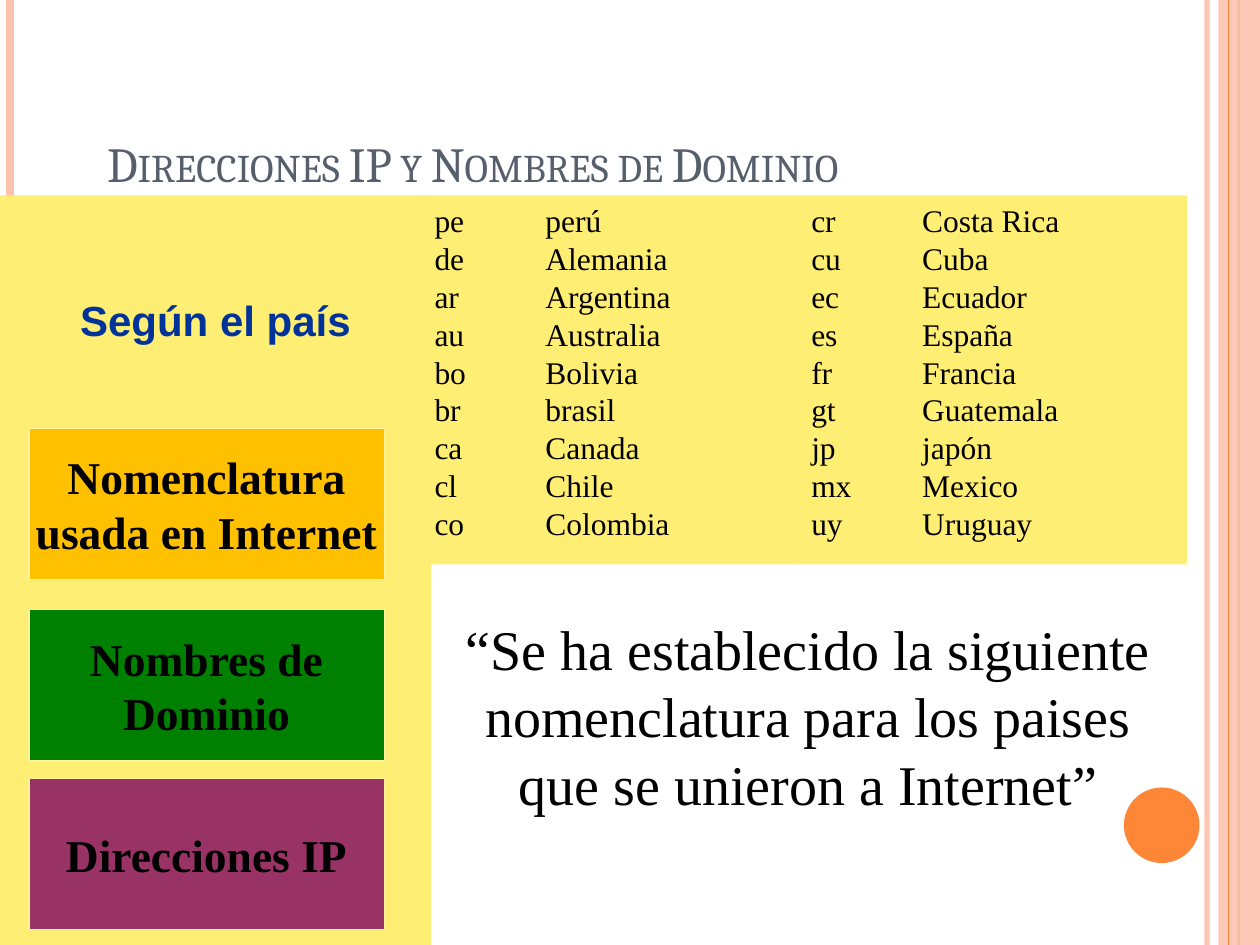
from dataclasses import dataclass

from lxml.etree import SubElement
from pptx import Presentation
from pptx.dml.color import RGBColor
from pptx.enum.shapes import MSO_CONNECTOR, MSO_SHAPE
from pptx.enum.text import MSO_ANCHOR, MSO_AUTO_SIZE, PP_ALIGN
from pptx.oxml.ns import qn
from pptx.util import Inches, Pt


@dataclass(frozen=True)
class Theme:
    heading_font: str = "Cambria"
    body_font: str = "Times New Roman"
    label_font: str = "Arial"
    heading: str = "575F6D"
    text: str = "000000"
    label: str = "003399"
    panel: str = "FFEE74"
    box_line: str = "FFF39D"
    amber: str = "FFC000"
    green: str = "008000"
    plum: str = "993366"
    pale: str = "FEC3AE"
    orange: str = "FE8637"
    heading_size: int = 28
    quote_size: int = 32
    box_size: int = 26
    label_size: int = 24
    list_size: int = 18
    line_height: float = 1.2


THEME = Theme()
WIDTH, HEIGHT = 10, 7.5

COUNTRIES_LEFT = [
    ("pe", "perú"), ("de", "Alemania"), ("ar", "Argentina"),
    ("au", "Australia"), ("bo", "Bolivia"), ("br", "brasil"),
    ("ca", "Canada"), ("cl", "Chile"), ("co", "Colombia"),
]
COUNTRIES_RIGHT = [
    ("cr", "Costa Rica"), ("cu", "Cuba"), ("ec", "Ecuador"),
    ("es", "España"), ("fr", "Francia"), ("gt", "Guatemala"),
    ("jp", "japón"), ("mx", "Mexico"), ("uy", "Uruguay"),
]


def set_alpha(fill, percent):
    color = fill._xPr.find(qn("a:solidFill"))[0]
    SubElement(color, qn("a:alpha"), val=str(percent * 1000))


def write_text(shape, text, size, color=THEME.text, font=THEME.body_font,
               bold=False, align=PP_ALIGN.CENTER, anchor=MSO_ANCHOR.TOP,
               wrap=True, hanging=0, small_caps=False):
    """Write one paragraph for each line of text, all in the same format."""
    frame = shape.text_frame
    frame.auto_size = MSO_AUTO_SIZE.NONE
    frame.word_wrap = wrap
    frame.vertical_anchor = anchor
    for index, line in enumerate(text.split("\n")):
        paragraph = frame.add_paragraph() if index else frame.paragraphs[0]
        paragraph.alignment = align
        paragraph.line_spacing = Pt(size * THEME.line_height)
        if hanging:
            properties = paragraph._p.get_or_add_pPr()
            properties.set("marL", str(Inches(hanging)))
            properties.set("indent", str(-Inches(hanging)))
        run = paragraph.add_run()
        run.text = line
        run.font.size = Pt(size)
        run.font.name = font
        run.font.bold = bold
        run.font.color.rgb = RGBColor.from_string(color)
        if small_caps:
            run.font._element.set("cap", "small")


def add_block(slide, box, fill, line=None, kind=MSO_SHAPE.RECTANGLE, alpha=None):
    shape = slide.shapes.add_shape(kind, *map(Inches, box))
    shape.shadow.inherit = False
    shape.fill.solid()
    shape.fill.fore_color.rgb = RGBColor.from_string(fill)
    if alpha:
        set_alpha(shape.fill, alpha)
    if line:
        shape.line.color.rgb = RGBColor.from_string(line)
        shape.line.width = Pt(0.75)
    else:
        shape.line.fill.background()
    return shape


def add_stripe(slide, x, color, width, alpha=None):
    """Draw a vertical line over the full height of the slide."""
    stripe = slide.shapes.add_connector(
        MSO_CONNECTOR.STRAIGHT, Inches(x), 0, Inches(x), Inches(HEIGHT))
    stripe.line.color.rgb = RGBColor.from_string(color)
    stripe.line.width = Pt(width)
    if alpha:
        set_alpha(stripe.line.fill, alpha)
    SubElement(stripe._element.spPr, qn("a:effectLst"))


def add_decoration(slide):
    add_stripe(slide, 9.58, THEME.pale, 3, alpha=93)
    add_stripe(slide, 0.08, THEME.pale, 4.5)
    add_stripe(slide, 9.83, THEME.orange, 1.5)
    add_block(slide, (9.67, 0, 0.33, HEIGHT), THEME.pale, alpha=87)
    add_stripe(slide, 9.75, THEME.orange, 0.75)
    add_block(slide, (8.92, 6.25, 0.6, 0.6), THEME.orange, kind=MSO_SHAPE.OVAL)


def add_title(slide, box, text):
    title = slide.shapes.title
    title.left, title.top, title.width, title.height = map(Inches, box)
    write_text(title, text, THEME.heading_size, THEME.heading, THEME.heading_font,
               align=PP_ALIGN.LEFT, anchor=MSO_ANCHOR.BOTTOM, small_caps=True)


def add_side_panel(slide, box):
    left, top, width, height = box
    panel = add_block(slide, box, THEME.panel)
    panel.text_frame.margin_top = Inches(0.79)
    write_text(panel, "Según el país", THEME.label_size, THEME.label,
               THEME.label_font, bold=True, wrap=False)
    topics = [
        (1.85, THEME.amber, "Nomenclatura\nusada en Internet"),
        (3.29, THEME.green, "Nombres de\nDominio"),
        (4.63, THEME.plum, "Direcciones IP"),
    ]
    for offset, fill, text in topics:
        topic = add_block(slide, (left + 0.23, top + offset, width - 0.6, 1.2),
                          fill, THEME.box_line)
        write_text(topic, text, THEME.box_size, bold=True,
                   anchor=MSO_ANCHOR.MIDDLE, wrap=False)


def add_country_list(slide, box, countries):
    block = add_block(slide, box, THEME.panel)
    text = "\n".join(f"{code}\t\t{country}" for code, country in countries)
    write_text(block, text, THEME.list_size, align=PP_ALIGN.LEFT, hanging=0.38)


def add_quote(slide, box, text):
    quote = slide.shapes.add_textbox(*map(Inches, box))
    write_text(quote, text, THEME.quote_size)


def main():
    presentation = Presentation()
    presentation.slide_width = Inches(WIDTH)
    presentation.slide_height = Inches(HEIGHT)
    slide = presentation.slides.add_slide(presentation.slide_layouts[5])

    add_decoration(slide)
    add_title(slide, (0.75, 1.01, 8.5, 0.57), "Direcciones IP y Nombres de Dominio")
    add_side_panel(slide, (0, 1.55, 3.42, 5.95))
    add_country_list(slide, (3.35, 1.55, 2.99, 2.93), COUNTRIES_LEFT)
    add_country_list(slide, (6.34, 1.55, 3.08, 2.93), COUNTRIES_RIGHT)
    add_quote(slide, (3.42, 4.83, 5.99, 1.72),
              "“Se ha establecido la siguiente nomenclatura para los paises "
              "que se unieron a Internet”")
    presentation.save("out.pptx")


if __name__ == "__main__":
    main()
